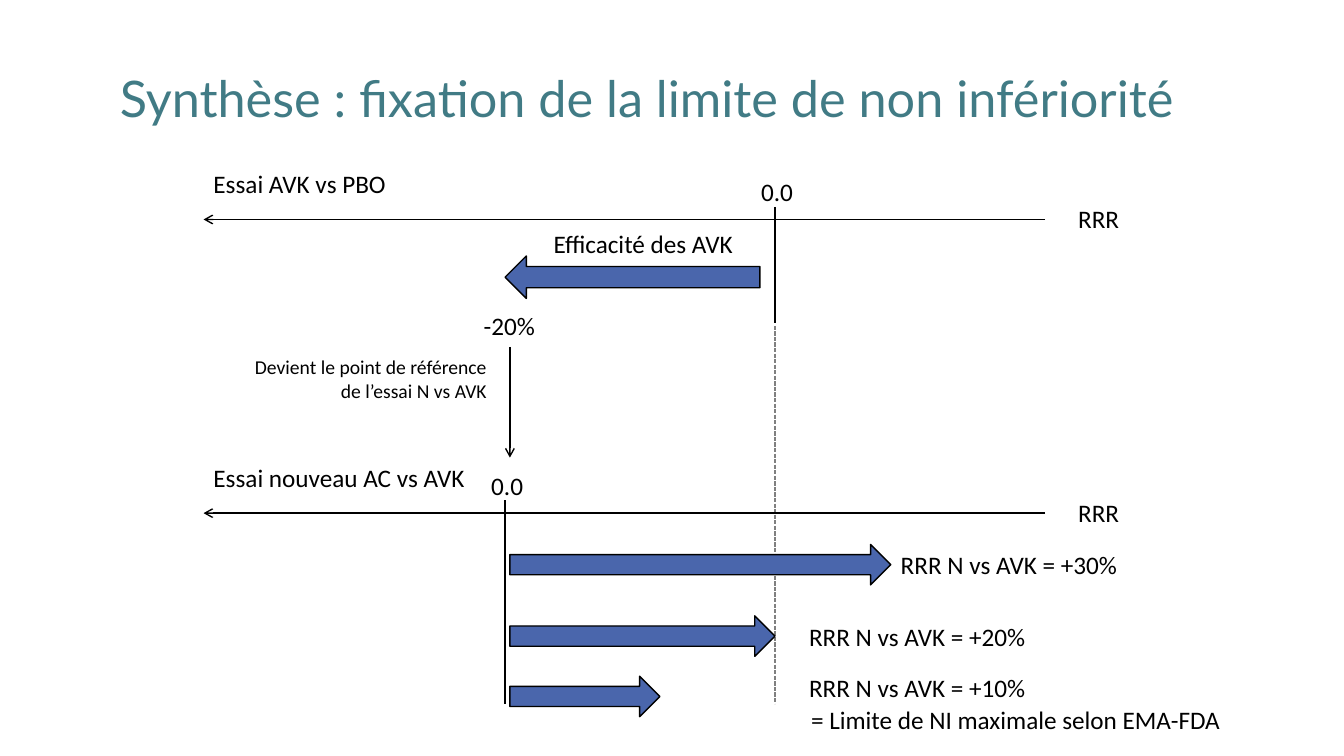
from dataclasses import dataclass
from lxml.etree import SubElement
from pptx import Presentation
from pptx.dml.color import RGBColor
from pptx.enum.dml import MSO_LINE
from pptx.enum.shapes import MSO_CONNECTOR, MSO_SHAPE
from pptx.enum.text import MSO_ANCHOR, PP_ALIGN
from pptx.oxml.ns import qn
from pptx.util import Cm, Pt


@dataclass(frozen=True)
class Theme:
    ink: RGBColor = RGBColor(0, 0, 0)
    teal: RGBColor = RGBColor(0x41, 0x7B, 0x85)
    blue: RGBColor = RGBColor(0x4A, 0x66, 0xAC)
    gray: RGBColor = RGBColor(0x80, 0x80, 0x80)
    head: str = "Lato"
    body: str = "Calibri"
    title: int = 36
    label: int = 18
    note: int = 14


@dataclass(frozen=True)
class Box:
    """A region in centimetres."""
    x: float
    y: float
    w: float
    h: float


THEME = Theme()
ROW = 1.02  # height of a label and of a bar


def write(slide, box, text, size=THEME.label, font=THEME.body,
          color=THEME.ink, wrap=False, align=PP_ALIGN.LEFT):
    shape = slide.shapes.add_textbox(Cm(box.x), Cm(box.y), Cm(box.w), Cm(box.h))
    frame = shape.text_frame
    frame.word_wrap = wrap
    para = frame.paragraphs[0]
    para.alignment = align
    run = para.add_run()
    run.text = text
    run.font.size = Pt(size)
    run.font.name = font
    run.font.color.rgb = color
    return frame


def draw_line(slide, x1, y1, x2, y2, color=THEME.ink, arrow=False, dash=None):
    line = slide.shapes.add_connector(
        MSO_CONNECTOR.STRAIGHT, Cm(x1), Cm(y1), Cm(x2), Cm(y2))
    line.line.color.rgb = color
    line.line.width = Pt(1)
    if dash:
        line.line.dash_style = dash
    if arrow:
        SubElement(line.line._get_or_add_ln(), qn("a:tailEnd"), type="arrow")
    SubElement(line._element.spPr, qn("a:effectLst"))


def draw_bar(slide, kind, box):
    bar = slide.shapes.add_shape(kind, Cm(box.x), Cm(box.y), Cm(box.w), Cm(box.h))
    bar.shadow.inherit = False
    bar.fill.solid()
    bar.fill.fore_color.rgb = THEME.blue
    bar.line.color.rgb = THEME.ink
    bar.line.width = Pt(1)


def add_title(slide, box):
    frame = write(slide, box, "Synthèse : fixation de la limite de non infériorité",
                  THEME.title, THEME.head, THEME.teal, wrap=True)
    frame.vertical_anchor = MSO_ANCHOR.MIDDLE
    frame.paragraphs[0].line_spacing = 0.9


def add_axis(slide, box, name, width, zero):
    """Draw a trial's RRR axis along the box top, with its zero mark."""
    right = box.x + box.w
    draw_line(slide, right, box.y, box.x, box.y, arrow=True)
    draw_line(slide, zero, box.y - 0.32, zero, box.y + box.h)
    write(slide, Box(right + 0.58, box.y - 0.53, 1.55, ROW), "RRR")
    write(slide, Box(zero - 0.6, box.y - 1.2, 1.32, ROW), "0.0")
    write(slide, Box(box.x, box.y - 1.41, width, ROW), name)


def add_first(slide, box, zero, ref):
    """Draw the trial against placebo."""
    add_axis(slide, box, "Essai AVK vs PBO", 4.9, zero)
    draw_bar(slide, MSO_SHAPE.LEFT_ARROW,
             Box(ref, box.y + 0.92, zero - ref - 0.38, 1.07))
    write(slide, Box(ref - 0.79, box.y + 2.17, 1.83, ROW), "-20%")
    write(slide, Box(ref + 0.97, box.y + 0.1, 5.1, ROW), "Efficacité des AVK")


def add_link(slide, box, zero):
    """Carry the effect and the old zero down to the next trial."""
    right = box.x + box.w
    draw_line(slide, zero, box.y - 0.53, zero, 17.73, THEME.gray,
              dash=MSO_LINE.SQUARE_DOT)
    draw_line(slide, right, box.y, right, box.y + box.h, arrow=True)
    write(slide, Box(box.x, box.y + 0.08, box.w - 0.33, 1.45),
          "Devient le point de référence de l’essai N vs AVK",
          THEME.note, wrap=True, align=PP_ALIGN.RIGHT)


def add_second(slide, box, ref):
    """Draw the trial against AVK, with its three results."""
    add_axis(slide, box, "Essai nouveau AC vs AVK", 6.91, ref)
    start = ref + 0.12
    side = start + 7.29
    results = (  # gain, bar top, bar width, label left, label top
        (30, 0.79, 9.6, start + 9.6, 0.79),
        (20, 2.59, 6.68, side, 2.59),
        (10, 4.11, 3.78, side, 3.88),
    )
    for gain, top, width, left, rise in results:
        draw_bar(slide, MSO_SHAPE.RIGHT_ARROW, Box(start, box.y + top, width, ROW))
        write(slide, Box(left, box.y + rise, 6.02, ROW), f"RRR N vs AVK = +{gain}%")
    write(slide, Box(side + 0.05, box.y + 4.7, 11.02, ROW),
          "= Limite de NI maximale selon EMA-FDA", wrap=True)


def main():
    deck = Presentation()
    deck.slide_width, deck.slide_height = Cm(33.87), Cm(19.05)
    slide = deck.slides.add_slide(deck.slide_layouts[6])
    zero, ref = 19.53, 12.73
    add_title(slide, Box(2.77, 0.71, 29.21, 3.68))
    add_first(slide, Box(5.13, 5.53, 21.21, 2.6), zero, ref)
    add_link(slide, Box(5.72, 8.74, 7.13, 2.79), zero)
    add_second(slide, Box(5.13, 12.93, 21.21, 4.8), ref)
    deck.save("out.pptx")


if __name__ == "__main__":
    main()
